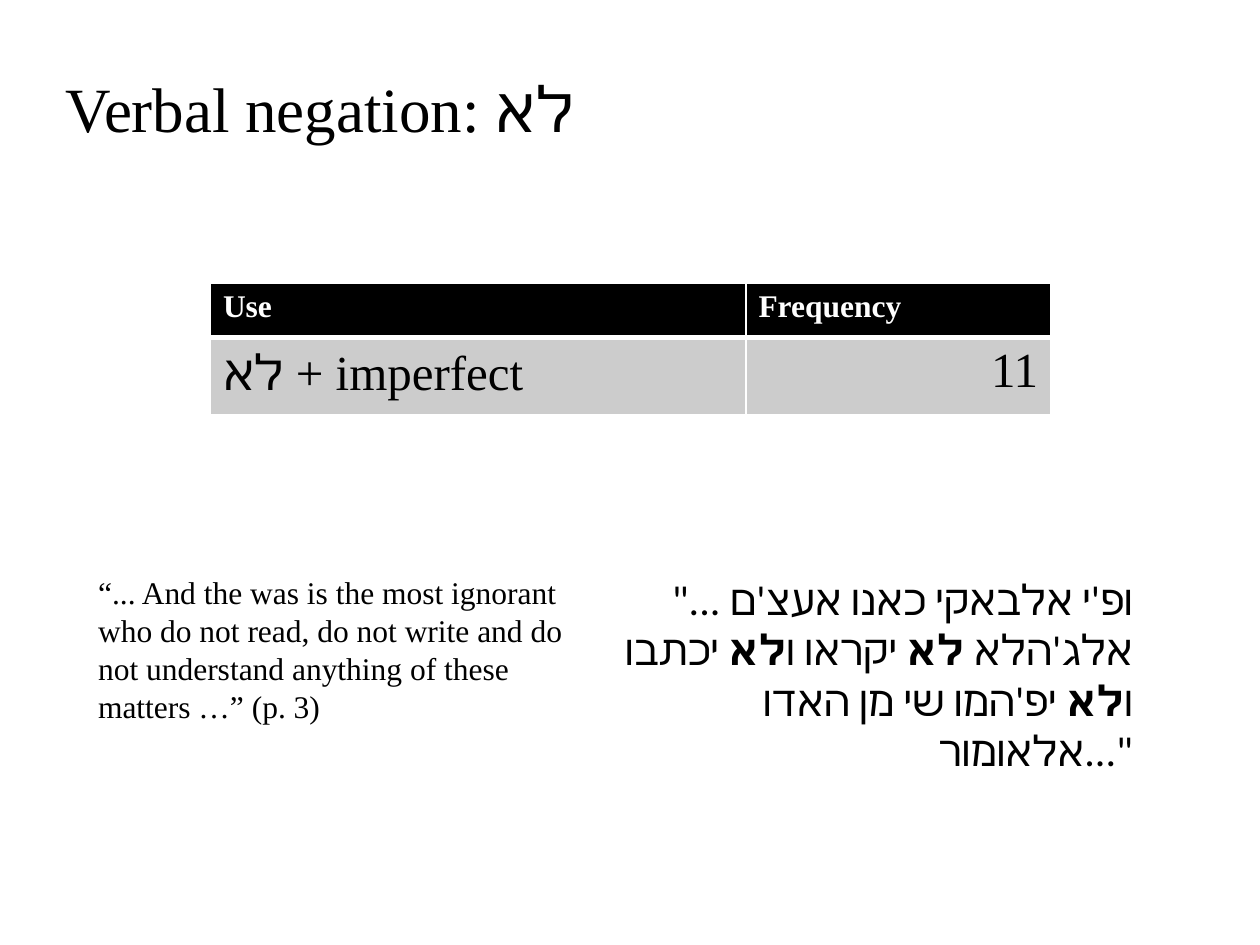
"""Build a slide on verbal negation with a frequency table and a quoted example."""
from lxml import etree
from pptx import Presentation
from pptx import util as u
from pptx.dml.color import RGBColor
from pptx.enum import text
from pptx.oxml.ns import qn

SERIF, HEBREW = "Times New Roman", "Calibri"
LEFT, RIGHT = text.PP_ALIGN.LEFT, text.PP_ALIGN.RIGHT
BLACK, WHITE, GREY = "000000", "FFFFFF", "CCCCCC"

TITLE = [("Verbal negation: ", SERIF, False), ("לא", HEBREW, False)]
TABLE = [
    [([("Use", SERIF, True)], LEFT), ([("Frequency", SERIF, True)], LEFT)],
    [([("לא", HEBREW, False), (" + imperfect", SERIF, False)], LEFT),
     ([("11", SERIF, False)], RIGHT)],
]
ROW_STYLES = [
    {"height": 0.43, "fill": BLACK, "color": WHITE, "size": 18, "top": 1, "bottom": 3},
    {"height": 0.61, "fill": GREY, "color": BLACK, "size": 28, "top": 3, "bottom": 1},
]
COLUMNS = [4.25, 2.42]
HEBREW_QUOTE = [(words, HEBREW, bold) for words, bold in [
    ("\"... ופ'י אלבאקי כאנו אעצ'ם אלג'הלא ", False), ("לא ", True),
    ("יקראו ו", False), ("לא", True), (" יכתבו ו", False), ("לא ", True),
    ("יפ'המו שי מן האדו אלאומור...\"", False)]]
ENGLISH_QUOTE = [("“... And the was is the most ignorant who do not read, do not write "
                  "and do not understand anything of these matters …” (p. 3)", SERIF, False)]
QUOTES = [(4.84, HEBREW_QUOTE, 24, RIGHT), (0.68, ENGLISH_QUOTE, 18, LEFT)]


def rgb(value):
    """Turn a hex string into a colour."""
    return RGBColor.from_string(value)


def write(tf, runs, size, align, color=BLACK):
    """Write one paragraph of runs, each with a font and weight."""
    tf.word_wrap = True
    p = tf.paragraphs[0]
    p.alignment = align
    for words, face, bold in runs:
        r = p.add_run()
        r.text = words
        for key, value in {"name": face, "size": u.Pt(size), "bold": bold}.items():
            setattr(r.font, key, value)
        r.font.color.rgb = rgb(color)
        etree.SubElement(r.font._element, qn("a:cs"), typeface=face)


def border(cell, top, bottom):
    """Draw white cell edges, with widths in points."""
    tc_pr = cell._tc.get_or_add_tcPr()
    for i, (side, width) in enumerate({"L": 1, "R": 1, "T": top, "B": bottom}.items()):
        ln = etree.Element(qn(f"a:ln{side}"), w=str(u.Pt(width)))
        fill = etree.SubElement(ln, qn("a:solidFill"))
        etree.SubElement(fill, qn("a:srgbClr"), val=WHITE)
        tc_pr.insert(i, ln)


def add_table(s):
    """Add the table of uses and frequencies."""
    box = [u.Inches(v) for v in (1.67, 2.25, sum(COLUMNS), 1.04)]
    table = s.shapes.add_table(len(TABLE), len(COLUMNS), *box).table
    for column, width in zip(table.columns, COLUMNS):
        column.width = u.Inches(width)
    for row, cells, style in zip(table.rows, TABLE, ROW_STYLES):
        row.height = u.Inches(style["height"])
        for cell, (runs, align) in zip(row.cells, cells):
            cell.fill.solid()
            cell.fill.fore_color.rgb = rgb(style["fill"])
            border(cell, style["top"], style["bottom"])
            write(cell.text_frame, runs, style["size"], align, style["color"])


def main():
    """Build and save the slide."""
    prs = Presentation()
    prs.slide_width, prs.slide_height = u.Inches(10), u.Inches(7.5)
    s = prs.slides.add_slide(prs.slide_layouts[5])
    title = s.shapes.title
    for key, value in {"left": 0.42, "top": 0.5, "width": 8.27, "height": 0.71}.items():
        setattr(title, key, u.Inches(value))
    title.text_frame.vertical_anchor = text.MSO_ANCHOR.TOP
    title.text_frame.auto_size = text.MSO_AUTO_SIZE.SHAPE_TO_FIT_TEXT
    write(title.text_frame, TITLE, 36, LEFT)
    add_table(s)
    for left, runs, size, align in QUOTES:
        sp = s.shapes.add_textbox(*[u.Inches(v) for v in (left, 4.5, 4.25, 1.31)])
        write(sp.text_frame, runs, size, align)
    prs.save("out.pptx")


if __name__ == "__main__":
    main()
